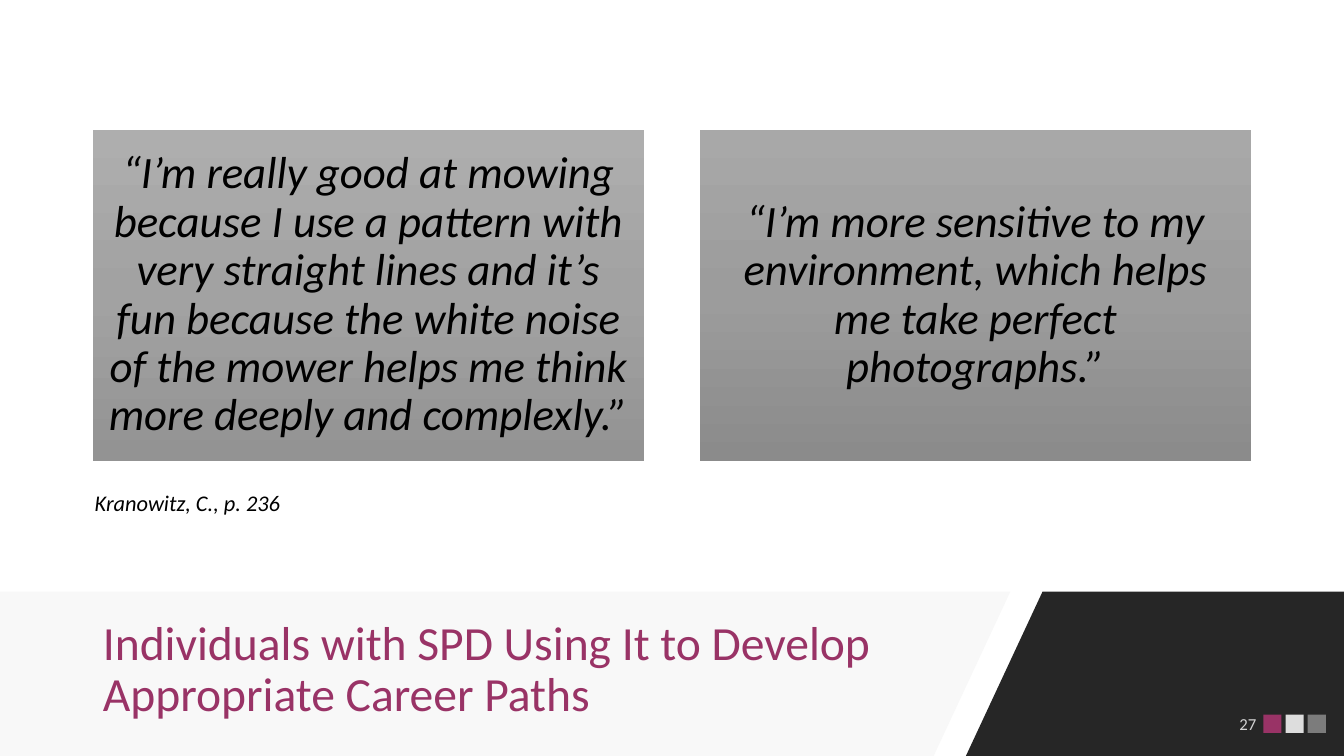
"""Builds a slide of two quotations above a slanted title band."""
from copy import deepcopy
from dataclasses import dataclass

from lxml import etree
from pptx import Presentation
from pptx.dml.color import RGBColor
from pptx.enum.shapes import MSO_SHAPE
from pptx.enum.text import MSO_ANCHOR, MSO_AUTO_SIZE, PP_ALIGN
from pptx.oxml.ns import qn
from pptx.util import Inches, Pt

RECTANGLE = MSO_SHAPE.RECTANGLE
LEFT, CENTER, RIGHT = PP_ALIGN.LEFT, PP_ALIGN.CENTER, PP_ALIGN.RIGHT
TOP, MIDDLE, BOTTOM = MSO_ANCHOR.TOP, MSO_ANCHOR.MIDDLE, MSO_ANCHOR.BOTTOM
NO_AUTOFIT = MSO_AUTO_SIZE.NONE
TITLE_ONLY = 5


@dataclass(frozen=True)
class Theme:
    font: str = "Calibri"
    accent: str = "993366"
    ink: str = "000000"
    light: str = "FFFFFF"
    dark_band: str = "262626"
    pale_band: str = "F8F8F8"
    squares: tuple = ("993366", "DDDDDD", "7C7C7C")
    left_gradient: tuple = ("AEAEAE", "A2A2A2", "939393")
    right_gradient: tuple = ("A8A8A8", "9C9C9C", "8B8B8B")
    title_size: int = 34
    quote_size: int = 32
    source_size: int = 16
    number_size: int = 12


class SlideBuilder:
    def __init__(self, page, theme):
        self.page = page
        self.theme = theme

    def set_text(self, shape, text, size, color, align=LEFT, anchor=TOP, italic=False, spacing=1.0):
        frame = shape.text_frame
        frame.text = text
        frame.word_wrap = True
        frame.auto_size = NO_AUTOFIT
        frame.vertical_anchor = anchor
        para = frame.paragraphs[0]
        para.alignment = align
        para.line_spacing = spacing
        span = para.runs[0]
        span.font.name = self.theme.font
        span.font.size = Pt(size)
        span.font.italic = italic
        span.font.color.rgb = RGBColor.from_string(color)
        return para

    def finish(self, shape, color):
        shape.shadow.inherit = False
        shape.line.fill.background()
        shape.fill.solid()
        shape.fill.fore_color.rgb = RGBColor.from_string(color)

    def band(self, points, color):
        corners = [(Inches(x), Inches(y)) for x, y in points]
        builder = self.page.shapes.build_freeform(*corners[0], scale=1.0)
        builder.add_line_segments(corners[1:], close=True)
        self.finish(builder.convert_to_shape(), color)

    def rectangle(self, left, top, width, height, color):
        box = self.page.shapes.add_shape(
            RECTANGLE, Inches(left), Inches(top), Inches(width), Inches(height))
        self.finish(box, color)
        return box

    def title(self, text, left, top, width, height):
        title = self.page.shapes.title
        title.left, title.top = Inches(left), Inches(top)
        title.width, title.height = Inches(width), Inches(height)
        self.set_text(title, text, self.theme.title_size, self.theme.accent,
                      anchor=MIDDLE, spacing=0.9)
        title._element.getparent().append(title._element)

    def quote(self, text, left, top, width, height, colors):
        box = self.rectangle(left, top, width, height, colors[0])
        box.fill.gradient()
        box.fill.gradient_angle = 270
        stop_list = box._element.spPr.find(".//" + qn("a:gsLst"))
        stop_list.insert(1, deepcopy(stop_list[0]))
        for index, (stop, color) in enumerate(zip(box.fill.gradient_stops, colors)):
            stop.position = index / 2
            stop.color.rgb = RGBColor.from_string(color)
        frame = box.text_frame
        frame.margin_left = frame.margin_right = Inches(0.13)
        frame.margin_top = frame.margin_bottom = Inches(0.13)
        self.set_text(box, text, self.theme.quote_size, self.theme.ink,
                      CENTER, MIDDLE, italic=True, spacing=0.9)

    def text_box(self, left, top, width, height):
        return self.page.shapes.add_textbox(
            Inches(left), Inches(top), Inches(width), Inches(height))

    def source(self, text, left, top, width, height):
        box = self.text_box(left, top, width, height)
        para = self.set_text(box, text, self.theme.source_size, self.theme.ink, italic=True)
        para.level = 1
        para._p.get_or_add_pPr().set("marL", str(Inches(0.5)))

    def page_number(self, text, left, top, width, height):
        box = self.text_box(left, top, width, height)
        para = self.set_text(box, text, self.theme.number_size, self.theme.light, RIGHT, BOTTOM)
        color = para._p.find(".//" + qn("a:srgbClr"))
        etree.SubElement(color, qn("a:alpha")).set("val", "80000")


def main():
    deck = Presentation()
    deck.slide_width, deck.slide_height = Inches(13.33), Inches(7.5)
    theme = Theme()
    slide = SlideBuilder(deck.slides.add_slide(deck.slide_layouts[TITLE_ONLY]), theme)

    slide.band([(10.34, 5.87), (13.33, 5.87), (13.33, 7.5), (9.58, 7.5)], theme.dark_band)
    slide.band([(0, 5.87), (10.02, 5.87), (9.26, 7.5), (0, 7.5)], theme.pale_band)
    slide.title("Individuals with SPD Using It to Develop Appropriate Career Paths",
                0.92, 6.05, 8.44, 1.2)

    quotes = [
        ("“I’m really good at mowing because I use a pattern with very straight lines "
         "and it’s fun because the white noise of the mower helps me think more deeply "
         "and complexly.”", theme.left_gradient),
        ("“I’m more sensitive to my environment, which helps me take perfect "
         "photographs.”", theme.right_gradient),
    ]
    for column, (text, colors) in enumerate(quotes):
        slide.quote(text, 0.92 + column * 6.02, 1.29, 5.47, 3.28, colors)

    slide.page_number("27", 11.09, 6.93, 1.47, 0.4)
    slide.source("Kranowitz, C., p. 236", 0.34, 4.8, 2.72, 0.37)
    for index, color in enumerate(theme.squares):
        slide.rectangle(12.53 + index * 0.22, 7.09, 0.18, 0.18, color)

    deck.save("out.pptx")


if __name__ == "__main__":
    main()
